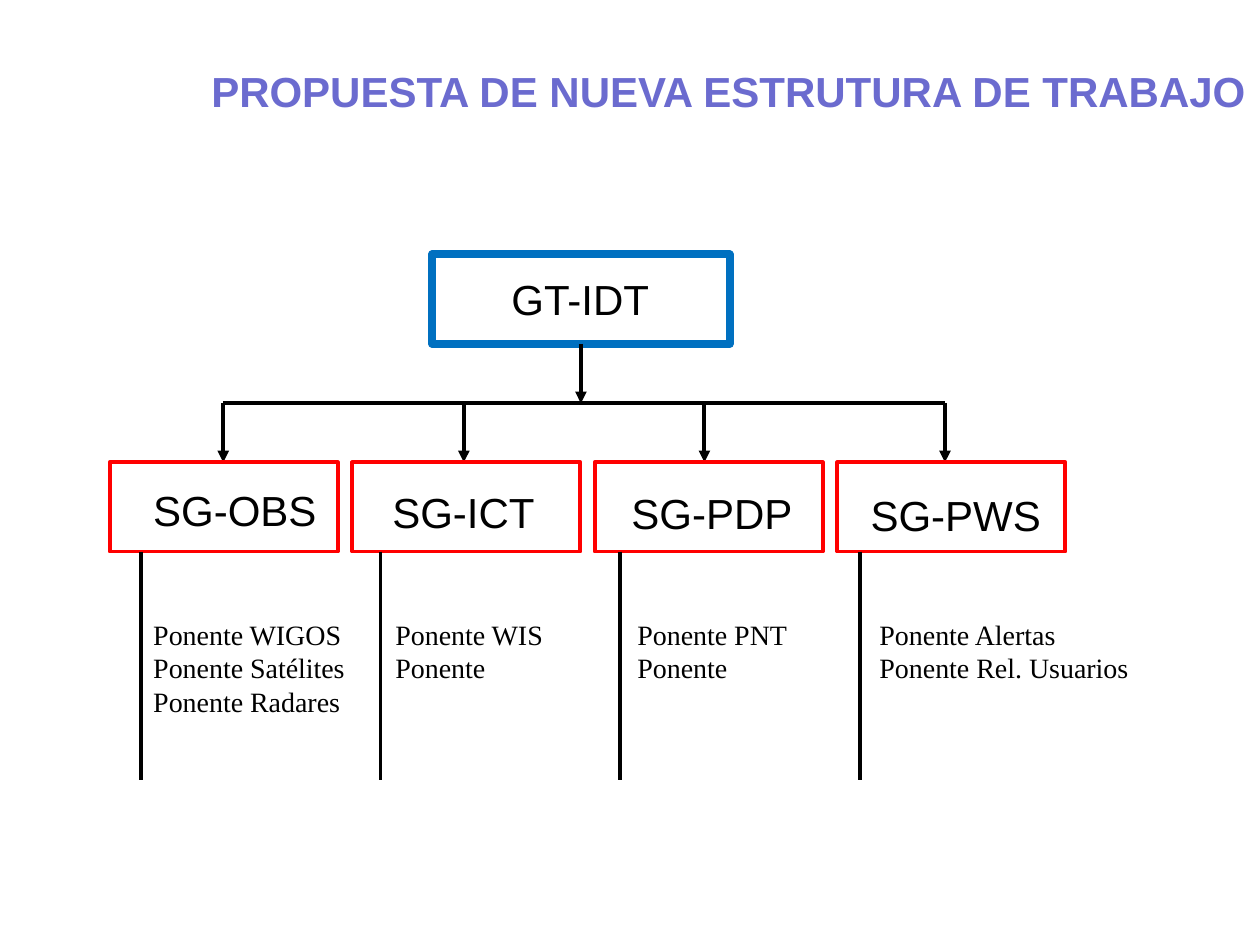
from dataclasses import dataclass

import lxml.etree
import pptx
import pptx.dml.color
import pptx.enum.shapes
import pptx.enum.text
import pptx.oxml.ns
import pptx.util

Cm = pptx.util.Cm
Pt = pptx.util.Pt
RGB = pptx.dml.color.RGBColor

BLACK = RGB(0, 0, 0)
BLUE = RGB(0x00, 0x70, 0xC0)
RED = RGB(0xFF, 0, 0)
VIOLET = RGB(0x6B, 0x6B, 0xCF)

HEAD = {"name": "Arial", "size": Pt(24), "bold": True}
LABEL = {"name": "Arial", "size": Pt(24)}
BODY = {"name": "Times New Roman", "size": Pt(16)}
FRAME = {"word_wrap": False,
         "auto_size": pptx.enum.text.MSO_AUTO_SIZE.SHAPE_TO_FIT_TEXT}

BUS = 8.13      # height of the line that joins the groups
TOP = 9.32      # top of the group boxes
TALL = 1.8      # height of every box
MID = 11.71     # centre of the lead box
FIRST, STEP = 4.5, 4.85   # arrows down to the groups


@dataclass
class Group:
    name: str
    wide: float
    roles: list[str]
    span: float


GROUPS = [
    Group("SG-OBS", 3.84,
          ["Ponente WIGOS", "Ponente Satélites", "Ponente Radares"], 4.45),
    Group("SG-ICT", 3.4, ["Ponente WIS", "Ponente"], 3.66),
    Group("SG-PDP", 3.78, ["Ponente PNT", "Ponente"], 3.66),
    Group("SG-PWS", 3.99, ["Ponente Alertas", "Ponente Rel. Usuarios"], 5.74),
]


def box(slide, x: float, y: float, wide: float, color: RGB, line: float) -> None:
    shape = slide.shapes.add_shape(
        pptx.enum.shapes.MSO_SHAPE.RECTANGLE, Cm(x), Cm(y), Cm(wide), Cm(TALL))
    shape.shadow.inherit = False
    shape.fill.background()
    shape.line.color.rgb = color
    shape.line.width = Pt(line)


def line(slide, x: float, y: float, to_x: float, to_y: float,
         arrow: bool = False) -> None:
    link = slide.shapes.add_connector(
        pptx.enum.shapes.MSO_CONNECTOR.STRAIGHT, Cm(x), Cm(y), Cm(to_x), Cm(to_y))
    link.line.color.rgb = BLACK
    link.line.width = Pt(2.25)
    qn = pptx.oxml.ns.qn
    if arrow:
        lxml.etree.SubElement(link.line._get_or_add_ln(), qn("a:tailEnd"),
                              type="triangle")
    lxml.etree.SubElement(link._element.spPr, qn("a:effectLst"))


def text(slide, x: float, y: float, wide: float, tall: float,
         rows: list[str], form: dict, color: RGB = BLACK) -> None:
    frame = slide.shapes.add_textbox(Cm(x), Cm(y), Cm(wide), Cm(tall)).text_frame
    for key, value in FRAME.items():
        setattr(frame, key, value)
    frame.text = "\n".join(rows)
    for para in frame.paragraphs:
        font = para.runs[0].font
        for key, value in form.items():
            setattr(font, key, value)
        font.color.rgb = color


def branch(slide, n: int, group: Group) -> None:
    """Draw one group: arrow, box, name, stem and list of roles."""
    x = FIRST + n * STEP
    line(slide, x, BUS, x, TOP, arrow=True)
    box(slide, 2.21 + n * 4.89, TOP, 4.6, RED, 2.25)
    text(slide, 2.84 + n * 4.82, 9.65 + n * 0.03, group.wide, 1.27,
         [group.name], LABEL)
    stem = 2.84 + n * 4.83
    line(slide, stem, TOP + TALL, stem, 15.72)
    text(slide, 2.84 + n * 4.88, 12.32, group.span,
         0.27 + 0.68 * len(group.roles), group.roles, BODY)


def main() -> None:
    deck = pptx.Presentation()
    deck.slide_width, deck.slide_height = Cm(25.4), Cm(19.05)
    slide = deck.slides.add_slide(deck.slide_layouts[6])

    text(slide, 4.01, 1.19, 21.39, 1.27,
         ["PROPUESTA DE NUEVA ESTRUTURA DE TRABAJO"], HEAD, VIOLET)
    box(slide, 8.71, 5.13, 6, BLUE, 4.5)
    text(slide, 10.06, 5.38, 3.28, 1.27, ["GT-IDT"], LABEL)
    line(slide, MID, 5.13 + TALL, MID, BUS, arrow=True)
    line(slide, FIRST, BUS, FIRST + STEP * (len(GROUPS) - 1), BUS)
    for n, group in enumerate(GROUPS):
        branch(slide, n, group)

    deck.save("out.pptx")


if __name__ == "__main__":
    main()
